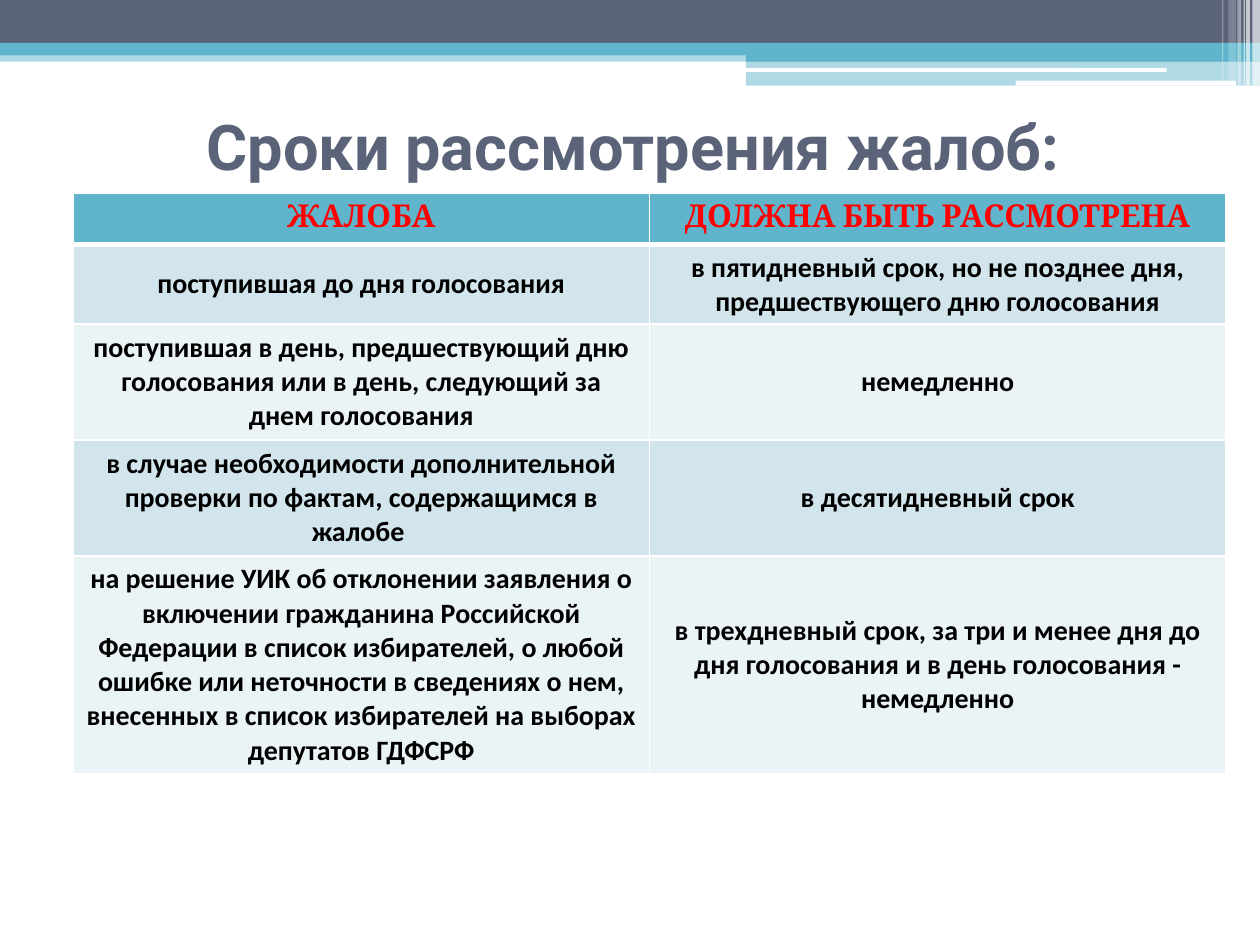
from lxml.etree import SubElement
from pptx import Presentation
from pptx.dml.color import RGBColor
from pptx.enum.shapes import MSO_SHAPE as Shape
from pptx.enum.text import MSO_ANCHOR as Anchor, PP_ALIGN as Align
from pptx.oxml.ns import qn
from pptx.util import Inches, Pt

SLATE, TEAL, WHITE = "5A6378", "60B5CC", "FFFFFF"
BAND_FILLS = ["D2E5EC", "EAF3F6"]

TITLE_FONT = {"name": "Roboto", "size": Pt(36), "bold": True}
HEADER_FONT = {"name": "Cambria", "size": Pt(18), "bold": True}
BODY_FONT = {"name": "Calibri", "size": Pt(16), "bold": True}

# Left, top, width, height, colour, opacity in percent
BANDS = [
    (0, 0.4, 10, 0.09, TEAL, 50),
    (0, 0, 10, 0.34, SLATE, 100),
    (0, 0.34, 10, 0.1, TEAL, 100),
    (5.92, 0.39, 4.08, 0.1, TEAL, 100),
    (5.92, 0.48, 4.08, 0.2, TEAL, 50),
]
ROUNDED_LINES = [
    (5.91, 0.54, 3.35, 0.03, WHITE, 100),
    (8.06, 0.64, 1.75, 0.04, WHITE, 100),
]
# Left, width, height, opacity in percent
CORNER_STRIPES = [
    (9.94, 0.06, 0.68, 65),
    (9.89, 0.03, 0.68, 65),
    (9.87, 0.01, 0.68, 60),
    (9.82, 0.03, 0.68, 40),
    (9.75, 0.06, 0.64, 20),
    (9.7, 0.01, 0.64, 30),
]

DEADLINES = [
    ("ЖАЛОБА", "ДОЛЖНА БЫТЬ РАССМОТРЕНА"),
    ("поступившая до дня голосования",
     "в пятидневный срок, но не позднее дня,\nпредшествующего дню голосования"),
    ("поступившая в день, предшествующий дню\n"
     "голосования или в день, следующий за днем голосования",
     "немедленно"),
    ("в случае необходимости дополнительной проверки по фактам, "
     "содержащимся в жалобе ",
     "в десятидневный срок"),
    ("на решение УИК об отклонении заявления о\n"
     "включении гражданина Российской Федерации в список избирателей, "
     "о любой ошибке или неточности в сведениях о нем, внесенных в список "
     "избирателей на выборах депутатов ГДФСРФ",
     "в трехдневный срок, за три и менее дня до\n"
     "дня голосования и в день голосования -\nнемедленно"),
]
ROW_HEIGHTS = [0.41, 0.63, 0.92, 0.92, 1.73]


def rgb(value):
    return RGBColor.from_string(value)


def add_bar(slide, left, top, width, height, color, opacity, preset=Shape.RECTANGLE):
    bar = slide.shapes.add_shape(
        preset, Inches(left), Inches(top), Inches(width), Inches(height))
    bar.shadow.inherit = False
    bar.line.fill.background()
    bar.fill.solid()
    bar.fill.fore_color.rgb = rgb(color)
    if opacity < 100:
        tint = bar.fill._xPr.find(".//" + qn("a:srgbClr"))
        SubElement(tint, qn("a:alpha"), val=str(opacity * 1000))


def write_text(frame, text, font_format, color, align):
    paragraph = frame.paragraphs[0]
    paragraph.text = text
    paragraph.alignment = align
    for run in paragraph.runs:
        for key, value in font_format.items():
            setattr(run.font, key, value)
        run.font.color.rgb = rgb(color)


def add_title(slide, text):
    title = slide.shapes.add_textbox(
        Inches(1.54), Inches(0.76), Inches(7.89), Inches(0.79))
    frame = title.text_frame
    frame.word_wrap = True
    frame.vertical_anchor = Anchor.MIDDLE
    write_text(frame, text, TITLE_FONT, SLATE, Align.LEFT)


def set_borders(cell, bottom_width):
    properties = cell._tc.get_or_add_tcPr()
    widths = {"lnL": 1, "lnR": 1, "lnT": 1, "lnB": bottom_width}
    for side, width in widths.items():
        border = SubElement(properties, qn("a:" + side), w=str(Pt(width)))
        fill = SubElement(border, qn("a:solidFill"))
        SubElement(fill, qn("a:srgbClr"), val=WHITE)


def fill_cell(cell, text, font_format, color, background, anchor, bottom_width):
    set_borders(cell, bottom_width)
    cell.fill.solid()
    cell.fill.fore_color.rgb = rgb(background)
    cell.vertical_anchor = anchor
    write_text(cell.text_frame, text, font_format, color, Align.CENTER)


def add_deadline_table(slide):
    table = slide.shapes.add_table(
        len(DEADLINES), 2, Inches(0.58), Inches(1.53),
        Inches(9.15), Inches(sum(ROW_HEIGHTS))).table
    for row, height in zip(table.rows, ROW_HEIGHTS):
        row.height = Inches(height)
    for row_index, texts in enumerate(DEADLINES):
        if row_index == 0:
            style = (HEADER_FONT, "FF0000", TEAL, Anchor.TOP, 3)
        else:
            band = BAND_FILLS[(row_index - 1) % 2]
            style = (BODY_FONT, "000000", band, Anchor.MIDDLE, 1)
        for column_index, text in enumerate(texts):
            fill_cell(table.cell(row_index, column_index), text, *style)


def main():
    deck = Presentation()
    deck.slide_width, deck.slide_height = Inches(10), Inches(7.5)
    slide = deck.slides.add_slide(deck.slide_layouts[6])

    # Header decoration
    for band in BANDS:
        add_bar(slide, *band)
    for rounded_line in ROUNDED_LINES:
        add_bar(slide, *rounded_line, preset=Shape.ROUNDED_RECTANGLE)
    for left, width, height, opacity in CORNER_STRIPES:
        add_bar(slide, left, 0, width, height, WHITE, opacity)

    # Title and table
    add_title(slide, "Сроки рассмотрения жалоб:")
    add_deadline_table(slide)

    deck.save("out.pptx")


if __name__ == "__main__":
    main()
